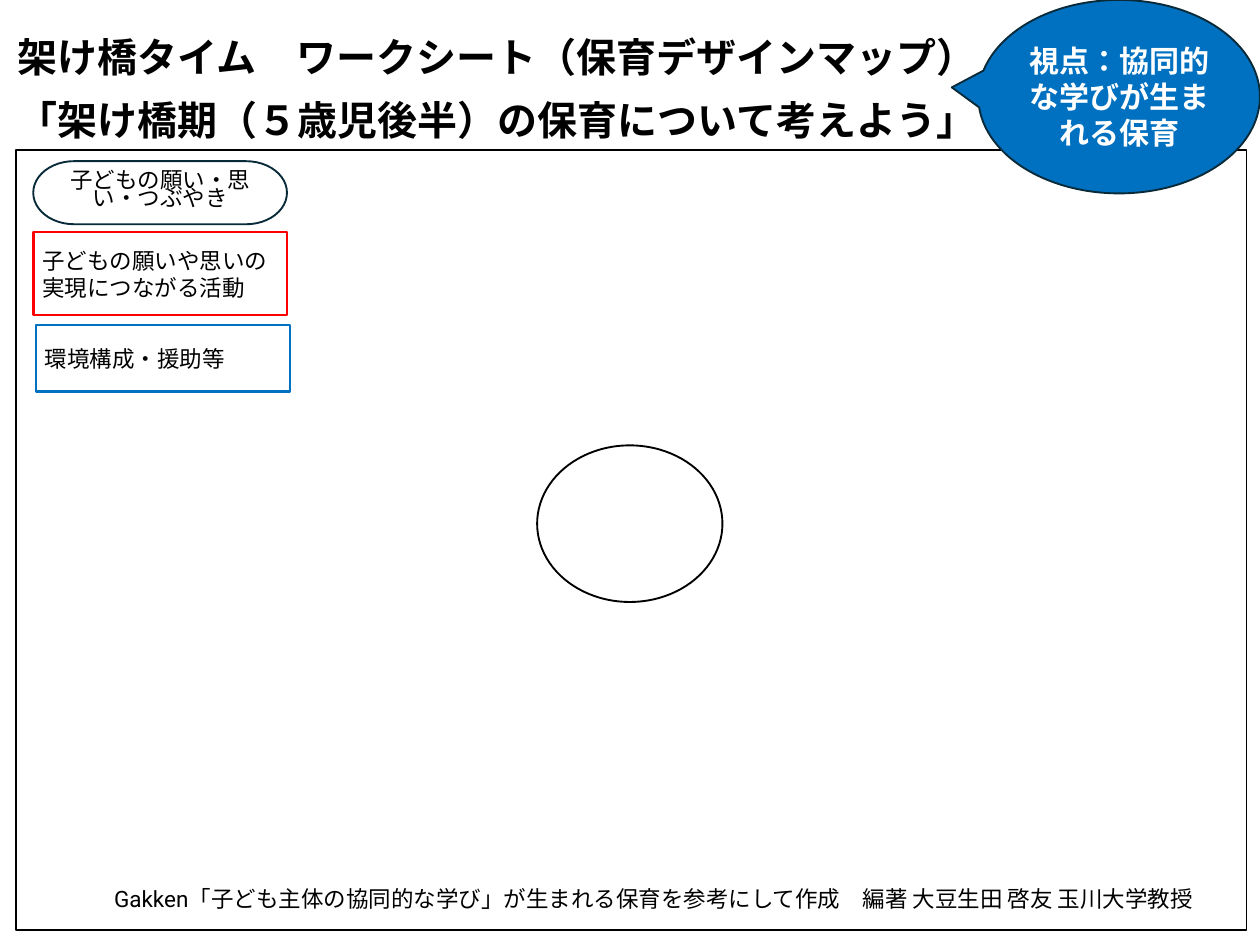
from dataclasses import dataclass
from lxml.etree import SubElement
from pptx import Presentation
from pptx.dml.color import RGBColor
from pptx.enum.lang import MSO_LANGUAGE_ID
from pptx.enum.shapes import MSO_SHAPE
from pptx.enum.text import MSO_ANCHOR, MSO_AUTO_SIZE, PP_ALIGN
from pptx.oxml.ns import qn
from pptx.util import Cm, Pt


@dataclass(frozen=True)
class Theme:
    black: str = "000000"
    white: str = "FFFFFF"
    blue: str = "0070C0"
    navy: str = "092A39"
    red: str = "FF0000"
    title: int = 32
    view: int = 24
    body: int = 18
    latin: str = "Roboto"
    asian: str = "Noto Sans CJK JP"


THEME = Theme()


def place(shape, box):
    shape.left, shape.top, shape.width, shape.height = (Cm(n) for n in box)


def add_run(para, text, size, color=THEME.black, face=THEME.latin, bold=False):
    run = para.add_run()
    run.text = text
    font = run.font
    font.size = Pt(size)
    font.bold = bold
    font.color.rgb = RGBColor.from_string(color)
    font.name = face
    font.language_id = MSO_LANGUAGE_ID.JAPANESE
    SubElement(font._element, qn("a:ea"), typeface=THEME.asian)


def add_title(slide, box, lines):
    title = slide.shapes.title
    place(title, box)
    frame = title.text_frame
    frame.word_wrap = True
    frame.auto_size = MSO_AUTO_SIZE.NONE
    frame.vertical_anchor = MSO_ANCHOR.MIDDLE
    para = frame.paragraphs[0]
    para.alignment = PP_ALIGN.CENTER
    para.line_spacing = Pt(50)
    for row, line in enumerate(lines):
        if row:
            para.add_line_break()
        add_run(para, line, THEME.title, face=THEME.asian, bold=True)


def add_form(slide, kind, box, line, width=1.5, fill=THEME.white):
    form = slide.shapes.add_shape(kind, *(Cm(n) for n in box))
    form.shadow.inherit = False
    form.fill.solid()
    form.fill.fore_color.rgb = RGBColor.from_string(fill)
    form.line.color.rgb = RGBColor.from_string(line)
    form.line.width = Pt(width)
    return form


def add_label(form, text, align=PP_ALIGN.LEFT, space=None, size=THEME.body, **style):
    frame = form.text_frame
    frame.word_wrap = True
    frame.vertical_anchor = MSO_ANCHOR.MIDDLE
    para = frame.paragraphs[0]
    para.alignment = align
    para.line_spacing = space
    add_run(para, text, size, **style)


def add_view(slide, box, text):
    view = add_form(slide, MSO_SHAPE.OVAL_CALLOUT, box, THEME.navy, fill=THEME.blue)
    view.adjustments[0] = -0.594
    view.adjustments[1] = -0.048
    add_label(view, text, PP_ALIGN.CENTER, size=THEME.view,
              color=THEME.white, face=THEME.asian, bold=True)


def add_source(slide, box, text):
    note = slide.shapes.add_textbox(*(Cm(n) for n in box))
    note.text_frame.word_wrap = True
    note.text_frame.auto_size = MSO_AUTO_SIZE.SHAPE_TO_FIT_TEXT
    add_run(note.text_frame.paragraphs[0], text, THEME.body)


def main():
    deck = Presentation()
    deck.slide_width, deck.slide_height = Cm(35.56), Cm(26.67)
    slide = deck.slides.add_slide(deck.slide_layouts[5])

    add_title(slide, (0, 0.38, 28.07, 3.81), (
        "架け橋タイム　ワークシート（保育デザインマップ）",
        "「架け橋期（５歳児後半）の保育について考えよう」",
    ))
    add_form(slide, MSO_SHAPE.RECTANGLE, (0.46, 4.24, 34.72, 22.02), THEME.black)
    add_view(slide, (27.61, 0, 7.95, 5.46), "視点：協同的な学びが生まれる保育")
    add_form(slide, MSO_SHAPE.FLOWCHART_CONNECTOR, (15.16, 12.57, 5.23, 4.42), THEME.black)

    wish = add_form(slide, MSO_SHAPE.FLOWCHART_TERMINATOR, (0.94, 4.55, 7.16, 1.78), THEME.navy)
    add_label(wish, "子どもの願い・思い・つぶやき", PP_ALIGN.CENTER, Pt(15))
    for box, line, text in (
        ((0.94, 6.55, 7.16, 2.34), THEME.red, "子どもの願いや思いの実現につながる活動"),
        ((1.02, 9.17, 7.16, 1.88), THEME.blue, "環境構成・援助等"),
    ):
        add_label(add_form(slide, MSO_SHAPE.RECTANGLE, box, line, 2), text)

    add_source(slide, (2.97, 24.84, 32.59, 1.02),
               "Gakken「子ども主体の協同的な学び」が生まれる保育を参考にして作成　編著 大豆生田 啓友 玉川大学教授")
    deck.save("out.pptx")


if __name__ == "__main__":
    main()
